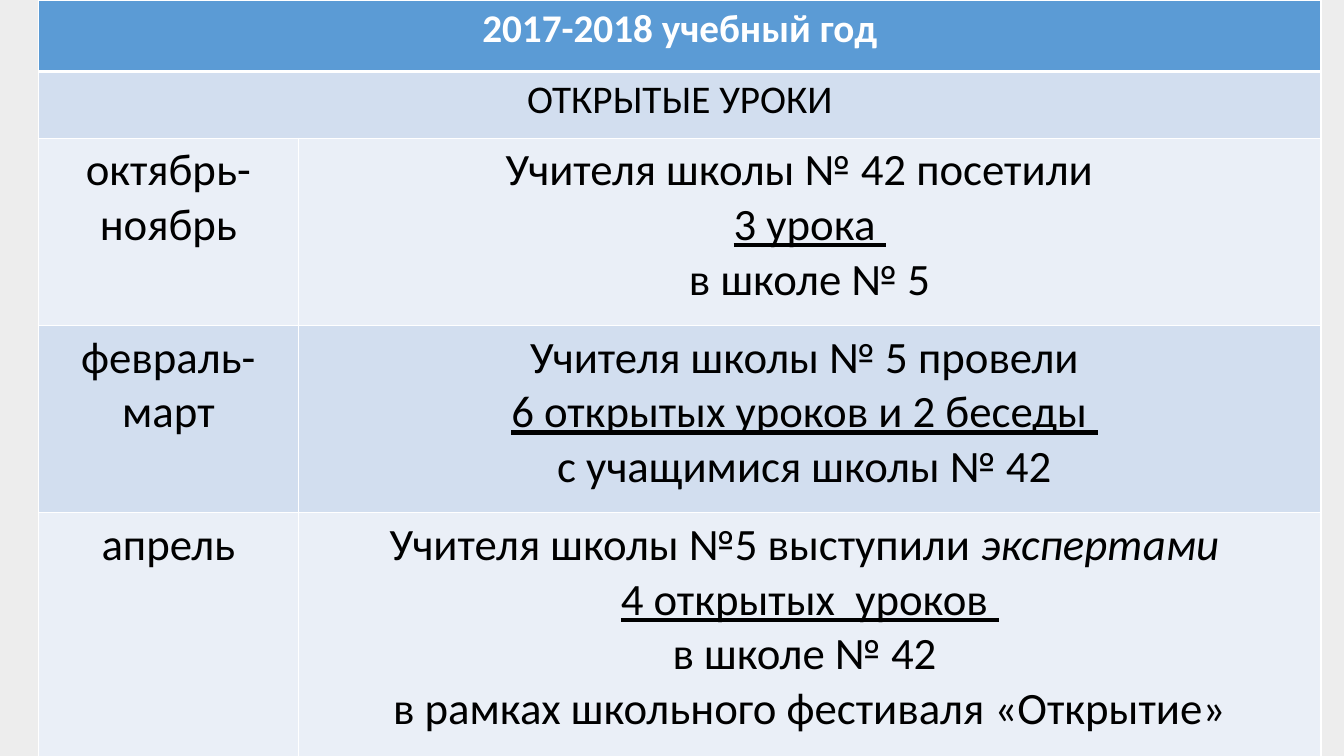
from pptx import Presentation
from pptx.dml.color import RGBColor as RGB
from pptx.enum.text import PP_ALIGN as ALIGN
from pptx.oxml.ns import qn
from pptx.util import Cm, Pt
from lxml.etree import SubElement

COLORS = {
    "page": "EDEDED", "header": "5B9BD5", "band": "D2DEEF",
    "light": "EAEFF7", "line": "FFFFFF", "text": "000000",
}
FONT = "Calibri"
COL_WIDTHS = [6.55, 25.77]
ROW_HEIGHTS = [1.8, 1.68, 4.72, 4.72, 6.14]

# Headings span both columns: text, fill, text colour, bold
HEADINGS = [
    ("2017-2018 учебный год", "header", "line", True),
    ("ОТКРЫТЫЕ УРОКИ", "band", "text", False),
]

# Months and paragraphs; each run is text and style (u underline, i italic)
EVENTS = [
    ("октябрь-ноябрь", [
        [("Учителя школы № 42 посетили  ", "")],
        [("3 урока ", "u")],
        [("в школе № 5", "")],
    ]),
    ("февраль-март", [
        [("Учителя школы № 5 провели ", "")],
        [("6 открытых уроков и 2 беседы ", "u"), (" ", "")],
        [("с учащимися школы № 42 ", "")],
    ]),
    ("апрель", [
        [("Учителя школы №5 выступили ", ""), ("экспертами ", "i")],
        [("4 открытых  уроков ", "u")],
        [("в школе № 42 ", "")],
        [("в рамках школьного фестиваля «Открытие»", "")],
    ]),
]


def color(name):
    return RGB.from_string(COLORS[name])


def set_borders(cell, top=1, bottom=1):
    tcPr = cell._tc.get_or_add_tcPr()
    for side, width in (("L", 1), ("R", 1), ("T", top), ("B", bottom)):
        ln = SubElement(tcPr, qn(f"a:ln{side}"), w=str(Pt(width)))
        fill = SubElement(ln, qn("a:solidFill"))
        SubElement(fill, qn("a:srgbClr"), val=COLORS["line"])


def fill_cell(cell, paragraphs, size, ink="text", bold=False):
    tf = cell.text_frame
    for i, runs in enumerate(paragraphs):
        p = tf.add_paragraph() if i else tf.paragraphs[0]
        p.alignment = ALIGN.CENTER
        for text, style in runs:
            r = p.add_run()
            r.text = text
            r.font.name = FONT
            r.font.size = Pt(size)
            r.font.bold = bold
            r.font.italic = "i" in style
            r.font.underline = "u" in style
            r.font.color.rgb = color(ink)


def add_schedule(s, left, top):
    frame = s.shapes.add_table(len(ROW_HEIGHTS), len(COL_WIDTHS), left, top,
                               Cm(sum(COL_WIDTHS)), Cm(sum(ROW_HEIGHTS)))
    table = frame.table
    for col, width in zip(table.columns, COL_WIDTHS):
        col.width = Cm(width)
    for row, height in zip(table.rows, ROW_HEIGHTS):
        row.height = Cm(height)

    # Borders and banded fills, with a thick line under the header
    for i, row in enumerate(table.rows):
        for cell in row.cells:
            set_borders(cell, top=3 if i == 1 else 1, bottom=3 if i == 0 else 1)
            cell.fill.solid()
            cell.fill.fore_color.rgb = color("band" if i % 2 else "light")

    # Merged headings
    for i, (text, fill, ink, bold) in enumerate(HEADINGS):
        cell = table.cell(i, 0)
        cell.merge(table.cell(i, 1))
        cell.fill.fore_color.rgb = color(fill)
        fill_cell(cell, [[(text, "")]], 28, ink, bold)

    # Events by month
    for i, (months, paragraphs) in enumerate(EVENTS, len(HEADINGS)):
        fill_cell(table.cell(i, 0), [[(months, "")]], 32)
        fill_cell(table.cell(i, 1), paragraphs, 32)


def main():
    prs = Presentation()
    prs.slide_width, prs.slide_height = Cm(33.87), Cm(19.05)
    s = prs.slides.add_slide(prs.slide_layouts[6])
    s.background.fill.solid()
    s.background.fill.fore_color.rgb = color("page")
    add_schedule(s, Cm(0.97), Cm(0))
    prs.save("out.pptx")


if __name__ == "__main__":
    main()
